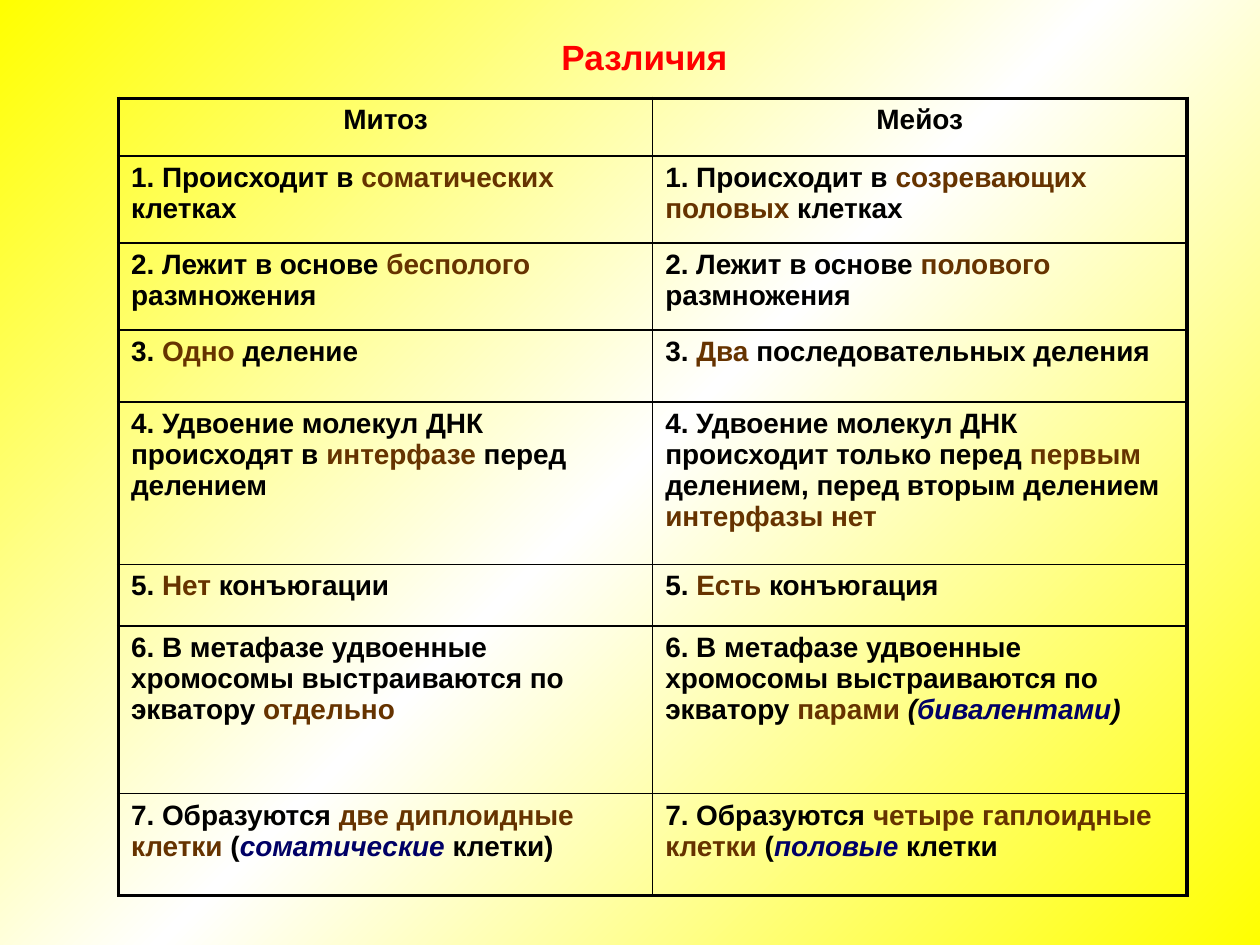
from copy import deepcopy
from dataclasses import dataclass

from lxml import etree
from pptx import Presentation
from pptx.dml.color import RGBColor
from pptx.enum import text
from pptx.oxml.ns import qn
from pptx.util import Inches, Pt


@dataclass(frozen=True)
class Theme:
    font: str = "Arial"
    title_size: float = 20
    body_size: float = 16
    thin: float = 1
    thick: float = 2.25
    title: str = "FF0000"
    ink: str = "000000"
    accent: str = "663300"
    term: str = "000066"
    edge: str = "FFFF00"
    middle: str = "FFFFFF"


THEME = Theme()
CENTER = text.PP_ALIGN.CENTER
PLAIN = {}
KEY = {"color": THEME.accent}
TERM = {"color": THEME.term, "italic": True}
SLANTED = {"italic": True}

HEADINGS = ("Митоз", "Мейоз")
ROW_HEIGHTS = (0.46, 0.69, 0.69, 0.57, 1.29, 0.49, 1.33, 0.81)
METAPHASE = "6. В метафазе удвоенные хромосомы выстраиваются по экватору "

# Each difference pairs a mitosis cell with a meiosis cell; a cell is a list of (words, format).
DIFFERENCES = [
    ([("1. Происходит в ", PLAIN), ("соматических", KEY), (" клетках", PLAIN)],
     [("1. Происходит в ", PLAIN), ("созревающих половых", KEY), (" клетках", PLAIN)]),
    ([("2. Лежит в основе ", PLAIN), ("бесполого", KEY), (" размножения", PLAIN)],
     [("2. Лежит в основе ", PLAIN), ("полового", KEY), (" размножения", PLAIN)]),
    ([("3. ", PLAIN), ("Одно", KEY), (" деление", PLAIN)],
     [("3. ", PLAIN), ("Два", KEY), (" последовательных деления", PLAIN)]),
    ([("4. Удвоение молекул ДНК происходят в ", PLAIN), ("интерфазе", KEY),
      (" перед делением", PLAIN)],
     [("4. Удвоение молекул ДНК происходит только перед ", PLAIN), ("первым", KEY),
      (" делением, перед вторым делением ", PLAIN), ("интерфазы нет", KEY)]),
    ([("5. ", PLAIN), ("Нет", KEY), (" конъюгации", PLAIN)],
     [("5. ", PLAIN), ("Есть", KEY), (" конъюгация", PLAIN)]),
    ([(METAPHASE, PLAIN), ("отдельно", KEY)],
     [(METAPHASE, PLAIN), ("парами ", KEY), ("(", SLANTED), ("бивалентами", TERM),
      (")", SLANTED)]),
    ([("7. Образуются ", PLAIN), ("две диплоидные клетки", KEY), (" (", PLAIN),
      ("соматические", TERM), (" клетки)", PLAIN)],
     [("7. Образуются ", PLAIN), ("четыре гаплоидные клетки", KEY), (" (", PLAIN),
      ("половые", TERM), (" клетки", PLAIN)]),
]


def add_words(paragraph, words, size=THEME.body_size, color=THEME.ink, italic=False):
    run = paragraph.add_run()
    run.text = words
    font = run.font
    font.name, font.size, font.bold, font.italic = THEME.font, Pt(size), True, italic
    font.color.rgb = RGBColor.from_string(color)


def set_space_before(paragraph, percent):
    before = etree.Element(qn("a:spcBef"))
    etree.SubElement(before, qn("a:spcPct"), val=str(percent * 1000))
    paragraph._p.get_or_add_pPr().insert(0, before)


def set_borders(cell, widths):
    """Draw cell borders; widths maps the sides L, R, T, B (in that order) to points."""
    properties = cell._tc.get_or_add_tcPr()
    for position, (side, width) in enumerate(widths.items()):
        line = etree.Element(qn(f"a:ln{side}"), w=str(Pt(width)))
        fill = etree.SubElement(line, qn("a:solidFill"))
        etree.SubElement(fill, qn("a:srgbClr"), val=THEME.ink)
        properties.insert(position, line)


def paint_background(slide):
    """Diagonal gradient, light along the middle."""
    fill = slide.background.fill
    fill.gradient()
    fill.gradient_angle = 315
    stops = slide.element.find(f".//{qn('a:gsLst')}")
    stops.append(deepcopy(stops[-1]))
    colors = (THEME.edge, THEME.middle, THEME.edge)
    for stop, color, position in zip(fill.gradient_stops, colors, (0, 0.5, 1)):
        stop.color.rgb = RGBColor.from_string(color)
        stop.position = position


def add_title(slide, left, top, width, height):
    frame = slide.shapes.add_textbox(left, top, width, height).text_frame
    frame.word_wrap = True
    frame.auto_size = text.MSO_AUTO_SIZE.SHAPE_TO_FIT_TEXT
    paragraph = frame.paragraphs[0]
    paragraph.alignment = CENTER
    add_words(paragraph, "Различия", size=THEME.title_size, color=THEME.title)


def add_comparison(slide, left, top, width, height):
    rows = [[[(heading, PLAIN)] for heading in HEADINGS], *DIFFERENCES]
    last_row, last_column = len(rows) - 1, len(HEADINGS) - 1
    table = slide.shapes.add_table(len(rows), len(HEADINGS), left, top, width, height).table
    table.first_row = table.horz_banding = False

    for r, (row, row_height) in enumerate(zip(rows, ROW_HEIGHTS)):
        table.rows[r].height = Inches(row_height)
        for c, content in enumerate(row):
            cell = table.cell(r, c)
            cell.fill.background()
            outer = {"L": c == 0, "R": c == last_column, "T": r == 0, "B": r == last_row}
            set_borders(cell, {side: THEME.thick if is_outer else THEME.thin
                               for side, is_outer in outer.items()})
            paragraph = cell.text_frame.paragraphs[0]
            if r == 0:
                paragraph.alignment = CENTER
            set_space_before(paragraph, 20)
            for words, style in content:
                add_words(paragraph, words, **style)


def main():
    deck = Presentation()
    deck.slide_width, deck.slide_height = Inches(10), Inches(7.5)
    slide = deck.slides.add_slide(deck.slide_layouts[6])
    paint_background(slide)
    add_comparison(slide, Inches(0.94), Inches(0.78), Inches(8.48), Inches(sum(ROW_HEIGHTS)))
    add_title(slide, Inches(3.91), Inches(0.23), Inches(2.41), Inches(0.44))
    deck.save("out.pptx")


if __name__ == "__main__":
    main()
